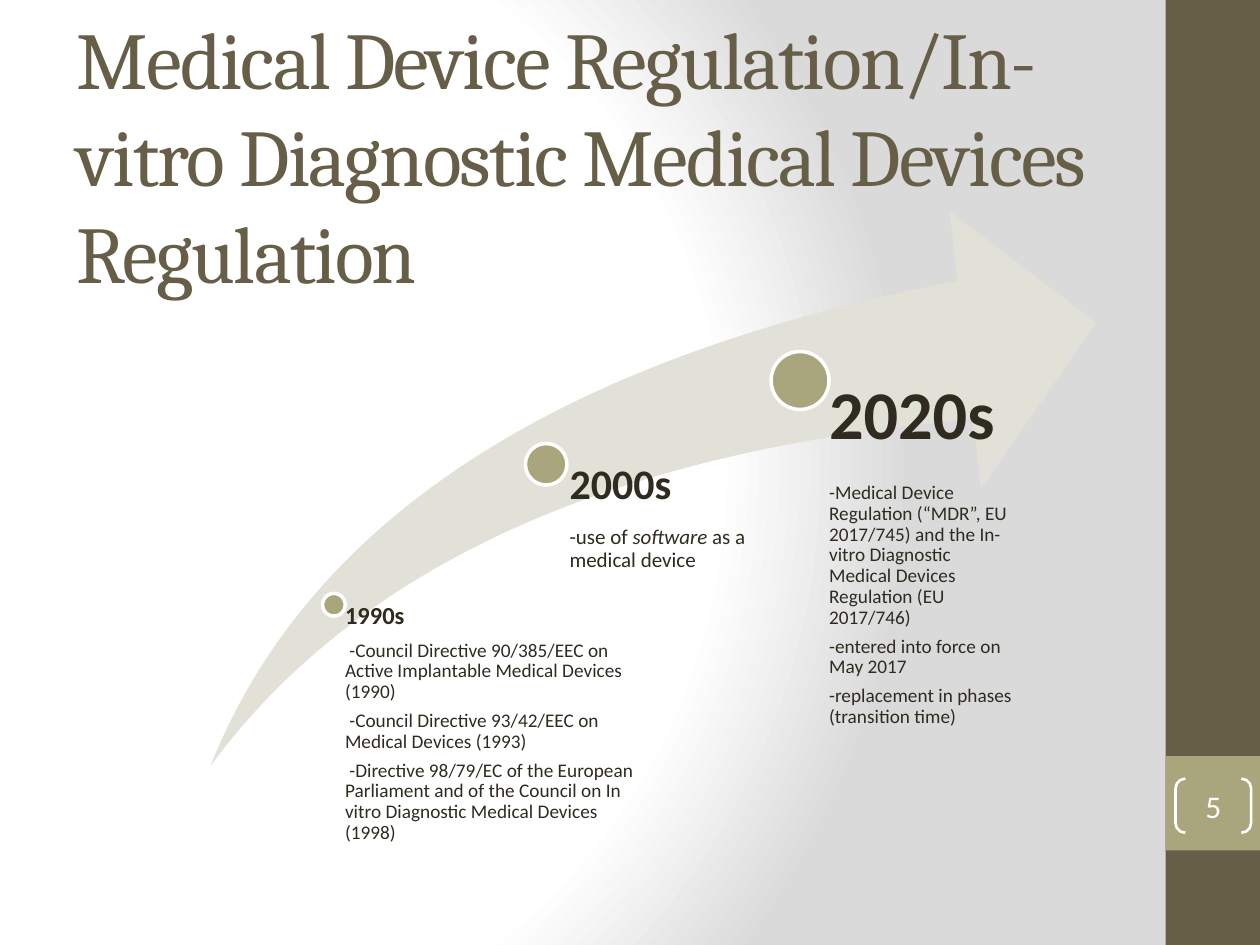
from pptx import Presentation
from pptx.dml.color import RGBColor
from pptx.enum.shapes import MSO_SHAPE
from pptx.enum.text import MSO_ANCHOR, MSO_AUTO_SIZE, PP_ALIGN
from pptx.oxml import parse_xml
from pptx.oxml.ns import nsdecls
from pptx.util import Inches, Pt

COLUMNS, ROWS = 100, 75
BROWN, OLIVE, PALE, INK, WHITE = "675E47", "A9A57C", "E2E1D7", "2F2B20", "FFFFFF"
BACKGROUND_STOPS = [(0, WHITE), (75, WHITE), (100, "DADADA")]

# Circle centre and diameter, text box, left inset, heading size, body size, body.
# Each body paragraph is a list of (text, italic) runs.
MILESTONES = [
    ("1990s", (26.5, 48, 1.8), (26.4, 47.9, 24.3, 21.9), 1, 14, 11, [
        [(" -Council Directive 90/385/EEC on Active Implantable Medical Devices (1990)", False)],
        [(" -Council Directive 93/42/EEC on Medical Devices (1993)", False)],
        [(" -Directive 98/79/EC of the European Parliament and of the Council on "
          "In vitro Diagnostic Medical Devices (1998)", False)],
    ]),
    ("2000s", (43.35, 36.85, 3.3), (43.4, 36.8, 16.9, 23.9), 1.8, 24, 12, [
        [("-use of", False), (" software ", True), ("as a medical device", False)],
    ]),
    ("2020s", (63.5, 30.2, 4.6), (63.4, 30.2, 16.9, 30.6), 2.4, 39, 11, [
        [("-Medical Device Regulation (“MDR”, EU 2017/745) and the In-vitro "
          "Diagnostic Medical Devices Regulation (EU 2017/746)", False)],
        [("-entered into force on May 2017", False)],
        [("-replacement in phases (transition time)", False)],
    ]),
]


def color(value):
    return RGBColor.from_string(value)


class SlideBuilder:
    """Places styled elements on a grid of COLUMNS by ROWS."""

    heading_font = "Cambria"
    body_font = "Calibri"

    def __init__(self, presentation):
        self.column = presentation.slide_width / COLUMNS
        self.row = presentation.slide_height / ROWS
        self.slide = presentation.slides.add_slide(presentation.slide_layouts[5])

    def box(self, left, top, width, height):
        return (round(left * self.column), round(top * self.row),
                round(width * self.column), round(height * self.row))

    def format_run(self, run, size, value, font=None, bold=False, italic=False):
        run.font.name = font or self.body_font
        run.font.size = Pt(size)
        run.font.bold = bold
        run.font.italic = italic
        run.font.color.rgb = color(value)

    def background(self, stops):
        """Fill the background with a circular gradient."""
        stop_list = "".join(
            f'<a:gs pos="{position * 1000}"><a:srgbClr val="{value}"/></a:gs>'
            for position, value in stops)
        background = parse_xml(
            f'<p:bg {nsdecls("p", "a")}><p:bgPr><a:gradFill rotWithShape="1">'
            f'<a:gsLst>{stop_list}</a:gsLst><a:path path="circle">'
            '<a:fillToRect l="20000" t="50000" r="100000" b="50000"/></a:path>'
            '</a:gradFill><a:effectLst/></p:bgPr></p:bg>')
        self.slide.element.cSld.insert(0, background)

    def title(self, text, place, size):
        title = self.slide.shapes.title
        title.left, title.top, title.width, title.height = self.box(*place)
        frame = title.text_frame
        frame.text = text
        frame.auto_size = MSO_AUTO_SIZE.NONE
        frame.vertical_anchor = MSO_ANCHOR.MIDDLE
        paragraph = frame.paragraphs[0]
        paragraph.alignment = PP_ALIGN.LEFT
        run = paragraph.runs[0]
        self.format_run(run, size, BROWN, self.heading_font)
        run.font._element.set("spc", "-100")

    def shape(self, kind, place, fill=None, line=None, line_width=2, adjustments=()):
        shape = self.slide.shapes.add_shape(kind, *self.box(*place))
        shape.shadow.inherit = False
        if fill:
            shape.fill.solid()
            shape.fill.fore_color.rgb = color(fill)
        else:
            shape.fill.background()
        if line:
            shape.line.color.rgb = color(line)
            shape.line.width = Pt(line_width)
        else:
            shape.line.fill.background()
        for index, adjustment in enumerate(adjustments):
            shape.adjustments[index] = adjustment
        return shape

    def dot(self, center_x, center_y, diameter):
        radius = diameter / 2
        self.shape(MSO_SHAPE.OVAL, (center_x - radius, center_y - radius, diameter, diameter),
                   OLIVE, WHITE)

    def page_number(self, text, place):
        shape = self.shape(MSO_SHAPE.DOUBLE_BRACKET, place, line=WHITE,
                           line_width=1.5, adjustments=[0.18])
        frame = shape.text_frame
        frame.margin_left = frame.margin_top = frame.margin_right = frame.margin_bottom = 0
        frame.vertical_anchor = MSO_ANCHOR.MIDDLE
        frame.text = text
        frame.paragraphs[0].alignment = PP_ALIGN.CENTER
        self.format_run(frame.paragraphs[0].runs[0], 18, WHITE)

    def milestone_text(self, heading, place, inset, heading_size, body_size, body):
        frame = self.slide.shapes.add_textbox(*self.box(*place)).text_frame
        frame.word_wrap = True
        frame.margin_left = round(inset * self.column)
        frame.margin_top = frame.margin_right = frame.margin_bottom = 0
        for index, runs in enumerate([[(heading, False)], *body]):
            is_heading = index == 0
            size = heading_size if is_heading else body_size
            paragraph = frame.paragraphs[0] if is_heading else frame.add_paragraph()
            paragraph.line_spacing = 0.9
            paragraph.space_after = Pt(round(size * 0.42, 1))
            for text, italic in runs:
                run = paragraph.add_run()
                run.text = text
                self.format_run(run, size, INK, bold=is_heading, italic=italic)


def main():
    presentation = Presentation()
    presentation.slide_width, presentation.slide_height = Inches(10), Inches(7.5)
    builder = SlideBuilder(presentation)
    builder.background(BACKGROUND_STOPS)
    builder.shape(MSO_SHAPE.RECTANGLE, (92.5, 0, 7.5, ROWS), BROWN)
    builder.shape(MSO_SHAPE.RECTANGLE, (92.5, 60, 7.5, 7.5), OLIVE)
    builder.title("Medical Device Regulation/In-vitro Diagnostic Medical Devices Regulation",
                  (5.1, 6, 83.3, 12.5), 46)
    builder.page_number("5", (93.3, 61.8, 6, 4.3))
    builder.shape(MSO_SHAPE.SWOOSH_ARROW, (16.7, 16.8, 70.3, 44), PALE,
                  adjustments=[0.25, 0.25])
    for heading, circle, *text_details in MILESTONES:
        builder.dot(*circle)
        builder.milestone_text(heading, *text_details)
    presentation.save("out.pptx")


if __name__ == "__main__":
    main()
